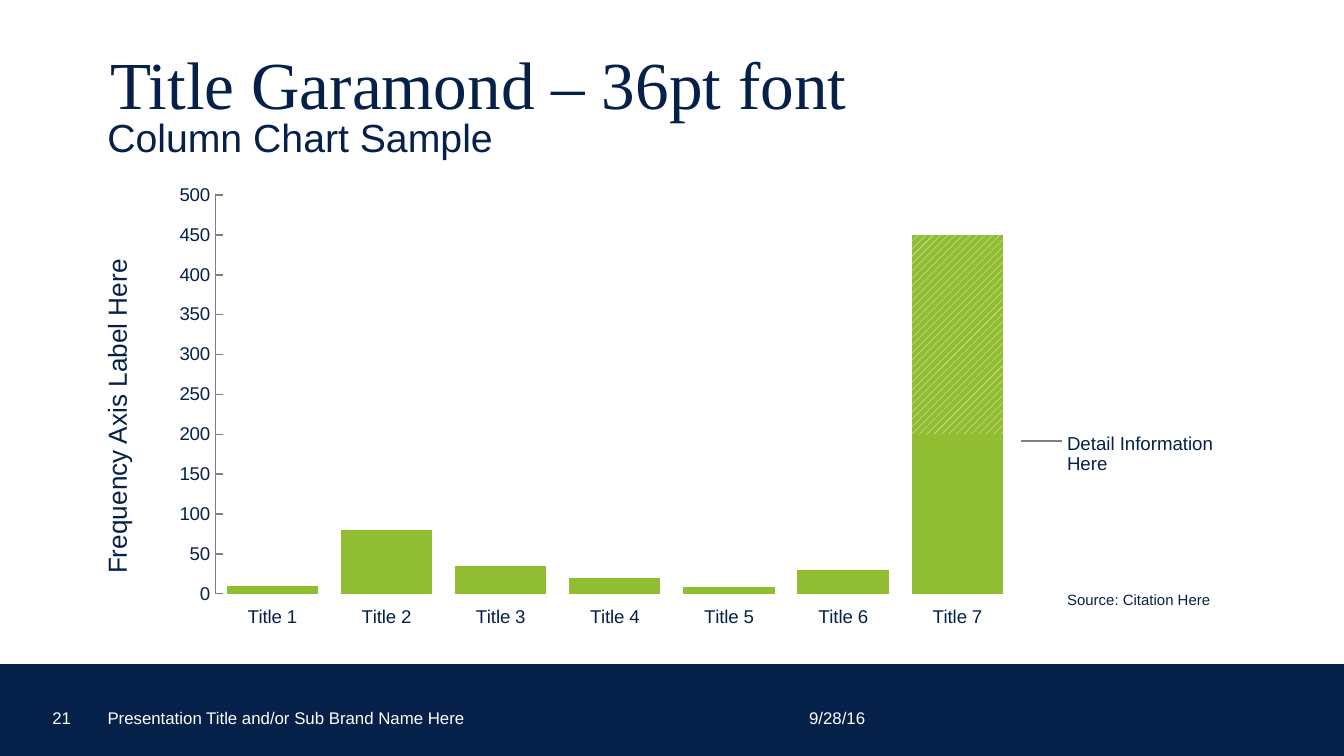
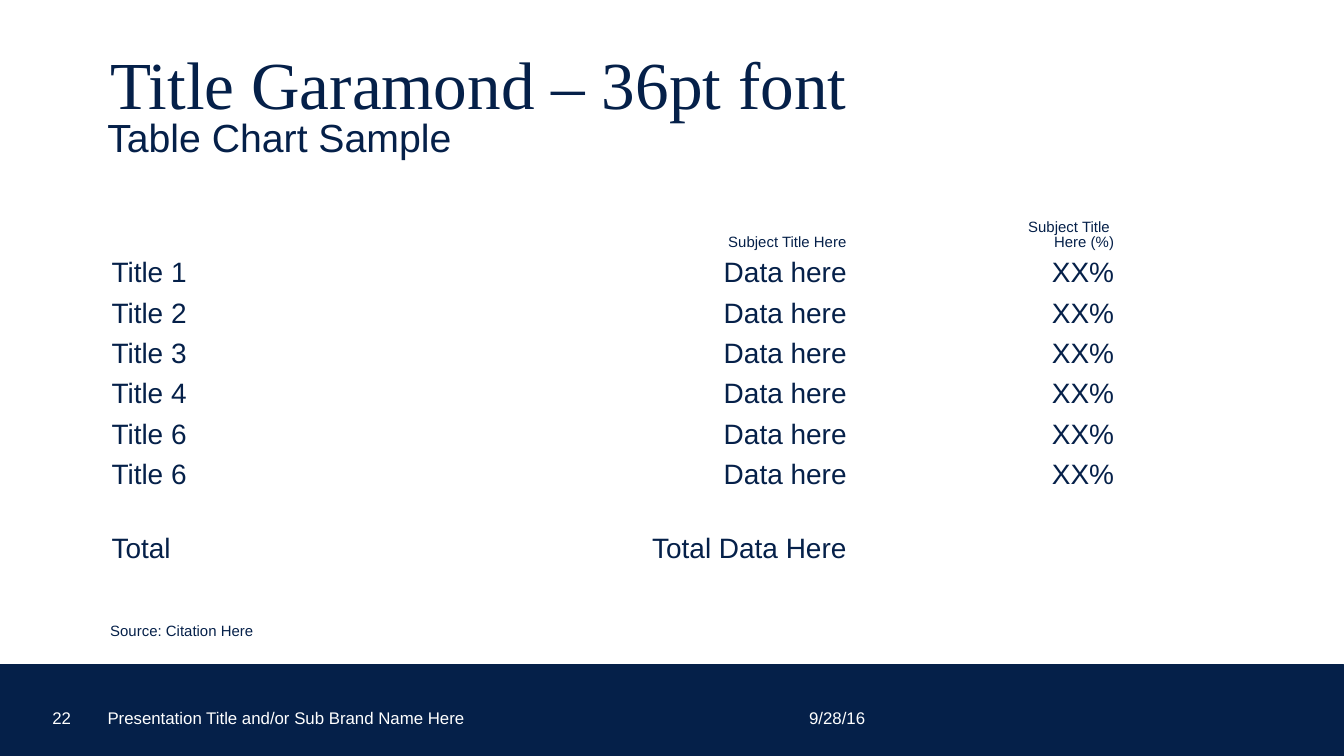
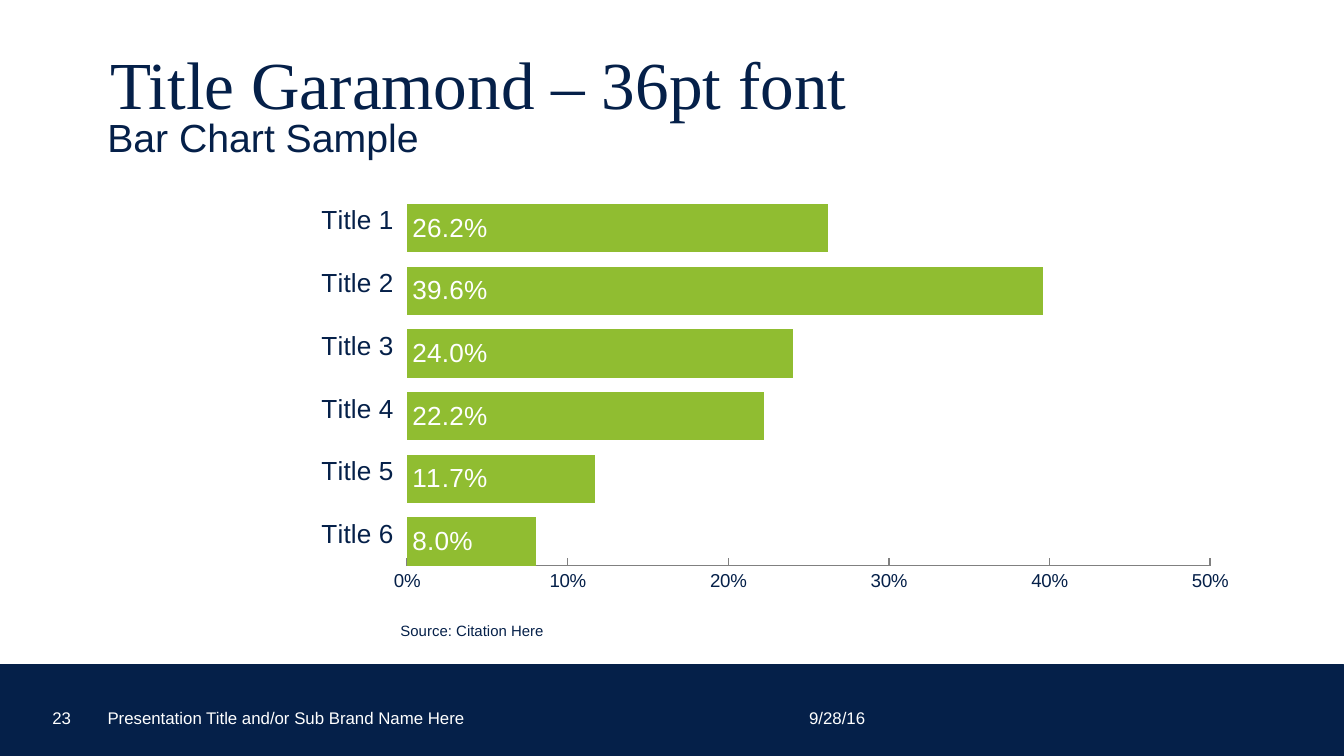
"""Build three sample slides: a column chart, a table and a bar chart."""
from dataclasses import dataclass

from lxml.etree import SubElement
from pptx import Presentation
from pptx.chart.data import CategoryChartData
from pptx.dml.color import RGBColor
from pptx.enum.chart import XL_CHART_TYPE, XL_LABEL_POSITION, XL_TICK_MARK
from pptx.enum.dml import MSO_PATTERN
from pptx.enum.shapes import MSO_CONNECTOR, MSO_SHAPE
from pptx.enum.text import MSO_ANCHOR, PP_ALIGN
from pptx.oxml import parse_xml
from pptx.oxml.ns import nsdecls, qn
from pptx.util import Inches, Pt


@dataclass(frozen=True)
class Theme:
    navy: RGBColor = RGBColor.from_string("052049")
    green: RGBColor = RGBColor.from_string("90BD31")
    blue: RGBColor = RGBColor.from_string("178CCB")
    gray: RGBColor = RGBColor.from_string("808080")
    white: RGBColor = RGBColor.from_string("FFFFFF")
    serif: str = "Times New Roman"
    sans: str = "Arial"
    title: int = 36
    subtitle: int = 21
    chart: int = 18
    cell: int = 15
    label: int = 14
    axis: int = 10
    footer: int = 9
    small: int = 8


T = Theme()


def add_text(s, box, text, size, color=T.navy, align=PP_ALIGN.LEFT,
             anchor=MSO_ANCHOR.TOP, spacing=0.9, margins=(0, 0)):
    sp = s.shapes.add_textbox(*map(Inches, box))
    tf = sp.text_frame
    tf.word_wrap = True
    tf.vertical_anchor = anchor
    tf.margin_left = tf.margin_right = Inches(margins[0])
    tf.margin_top = tf.margin_bottom = Inches(margins[1])
    p = tf.paragraphs[0]
    p.text = text
    p.alignment = align
    p.line_spacing = spacing
    p.font.name, p.font.size, p.font.color.rgb = T.sans, Pt(size), color
    return sp


def add_bars(s, kind, box, cats, values, plot_box, gap, overlap, scale, cat_size):
    data = CategoryChartData()
    data.categories = cats
    for i, vals in enumerate(values, 1):
        data.add_series(f"Series {i}", vals)
    chart = s.shapes.add_chart(kind, *map(Inches, box), data).chart
    chart.has_title = chart.has_legend = False
    chart.font.name, chart.font.size = T.serif, Pt(T.chart)
    chart.font.color.rgb = T.navy

    area = chart.element.find(".//" + qn("c:plotArea"))
    for old in area.findall(qn("c:layout")):
        area.remove(old)
    layout = parse_xml(f"<c:layout {nsdecls('c')}><c:manualLayout/></c:layout>")
    settings = [("layoutTarget", "inner"), ("xMode", "edge"), ("yMode", "edge")]
    for tag, val in settings + list(zip("xywh", plot_box)):
        SubElement(layout[0], qn("c:" + tag)).set("val", str(val))
    area.insert(0, layout)

    plot = chart.plots[0]
    plot.vary_by_categories = False
    plot.gap_width, plot.overlap = gap, overlap
    for series, color in zip(plot.series, (T.green, T.blue)):
        series.invert_if_negative = False
        series.format.fill.solid()
        series.format.fill.fore_color.rgb = color

    cat, val = chart.category_axis, chart.value_axis
    for axis, size, tick in ((cat, cat_size, XL_TICK_MARK.OUTSIDE),
                             (val, T.axis, XL_TICK_MARK.INSIDE)):
        axis.has_major_gridlines = False
        axis.major_tick_mark, axis.minor_tick_mark = tick, XL_TICK_MARK.NONE
        font = axis.tick_labels.font
        font.name, font.size, font.color.rgb = T.sans, Pt(size), T.navy
    cat.format.line.fill.background()
    val.format.line.color.rgb = T.gray
    val.format.line.width = Pt(0.75)
    val.minimum_scale = 0
    val.maximum_scale, val.major_unit = scale
    return chart


prs = Presentation()
prs.slide_width = Inches(10)
prs.slide_height = prs.slide_width * 9 // 16
title_only = prs.slide_layouts[5]

slides = []
for number, subtitle in enumerate(
        ("Column Chart Sample", "Table Chart Sample", "Bar Chart Sample"), 21):
    s = prs.slides.add_slide(title_only)
    slides.append(s)
    title = s.shapes.title
    title.left, title.top = Inches(0.72), Inches(0.36)
    title.width, title.height = Inches(8.84), Inches(0.63)
    tf = title.text_frame
    tf.vertical_anchor = MSO_ANCHOR.MIDDLE
    tf.margin_bottom = Inches(0.08)
    p = tf.paragraphs[0]
    p.text = "Title Garamond – 36pt font"
    p.alignment, p.line_spacing = PP_ALIGN.LEFT, 0.85
    p.font.name, p.font.size, p.font.color.rgb = T.serif, Pt(T.title), T.navy
    add_text(s, (0.7, 0.83, 8.83, 0.31), subtitle, T.subtitle, margins=(0.1, 0.05))
    for box, text in (
            ((0.8, 5.31, 4.71, 0.11), "Presentation Title and/or Sub Brand Name Here"),
            ((0.39, 5.29, 0.27, 0.13), str(number)),
            ((6.02, 5.29, 1.01, 0.13), "9/28/16")):
        add_text(s, box, text, T.footer, T.white, anchor=MSO_ANCHOR.BOTTOM, spacing=1.0)

column_slide, table_slide, bar_slide = slides

band = column_slide.shapes.add_shape(
    MSO_SHAPE.RECTANGLE, 0, Inches(4.95), prs.slide_width, Inches(0.68))
band.shadow.inherit = False
band.fill.solid()
band.fill.fore_color.rgb = band.line.color.rgb = T.navy
band.line.width = Pt(1.5)
title_only.shapes.element.append(band.element)

for s, left, top in ((column_slide, 7.94, 4.41), (table_slide, 0.82, 4.64),
                     (bar_slide, 2.98, 4.64)):
    add_text(s, (left, top, 1.66, 0.12), "Source: Citation Here", T.small)

chart = add_bars(
    column_slide, XL_CHART_TYPE.COLUMN_STACKED, (1.12, 1.34, 7.19, 3.33),
    [f"Title {i}" for i in range(1, 8)],
    [(10, 80, 35, 20, 8, 30, 200), (None,) * 6 + (250,)],
    (0.067, 0.034, 0.827, 0.903), 25, 100, (500, 50), T.axis)
chart_fill = chart.plots[0].series[1].points[6].format.fill
chart_fill.patterned()
chart_fill.pattern = MSO_PATTERN.WIDE_UPWARD_DIAGONAL
chart_fill.fore_color.rgb, chart_fill.back_color.rgb = T.white, T.green
axis_label = add_text(column_slide, (-0.48, 2.99, 2.73, 0.22),
                      "Frequency Axis Label Here", T.label, align=PP_ALIGN.CENTER)
axis_label.rotation = 270
leader = column_slide.shapes.add_connector(
    MSO_CONNECTOR.STRAIGHT, Inches(7.6), Inches(3.28), Inches(7.9), Inches(3.28))
leader.line.color.rgb = T.gray
leader.line.width = Pt(1)
SubElement(leader.element.spPr, qn("a:effectLst"))
add_text(column_slide, (7.94, 3.23, 1.66, 0.31), "Detail Information\vHere", T.axis)

rows = [("", "Subject Title Here", "Subject Title \vHere (%)")]
rows += [(f"Title {i}", "Data here", "XX%") for i in (1, 2, 3, 4, 6, 6)]
rows += [("Total", "Total Data Here", "")]
table = table_slide.shapes.add_table(
    len(rows), 3, Inches(0.73), Inches(1.58), Inches(7.66), Inches(2.65)).table
table.first_row = table.horz_banding = False
for col, width in zip(table.columns, (3.03, 2.64, 1.99)):
    col.width = Inches(width)
for r, (texts, height) in enumerate(zip(rows, [0.32] + [0.3] * 6 + [0.53])):
    table.rows[r].height = Inches(height)
    for c, text in enumerate(texts):
        cell = table.cell(r, c)
        cell.fill.background()
        cell.margin_left = cell.margin_right = Inches(0.1)
        cell.margin_top = cell.margin_bottom = Pt(2.7 if text else 0)
        cell.vertical_anchor = (
            MSO_ANCHOR.BOTTOM if r in (0, len(rows) - 1) else MSO_ANCHOR.TOP)
        p = cell.text_frame.paragraphs[0]
        p.text = text
        p.alignment = PP_ALIGN.RIGHT if c else PP_ALIGN.LEFT
        p.line_spacing = 0.9
        p.font.name, p.font.color.rgb = T.sans, T.navy
        p.font.size = Pt(T.cell if r else T.small)

chart = add_bars(
    bar_slide, XL_CHART_TYPE.BAR_CLUSTERED, (2.25, 1.18, 7.35, 3.33),
    [f"Title {i}" for i in range(6, 0, -1)],
    [(0.08, 0.117, 0.222, 0.24, 0.396, 0.262), (None,) * 6],
    (0.106, 0.069, 0.813, 0.841), 0, 70, (0.5, 0.1), T.label)
val_labels = chart.value_axis.tick_labels
val_labels.number_format, val_labels.number_format_is_linked = "0%", False
labels = chart.plots[0].series[0].data_labels
labels.show_value = True
labels.position = XL_LABEL_POSITION.INSIDE_BASE
labels.number_format, labels.number_format_is_linked = "0.0%", False
labels.font.name, labels.font.size = T.sans, Pt(T.label)
labels.font.color.rgb = T.white

prs.save("out.pptx")
